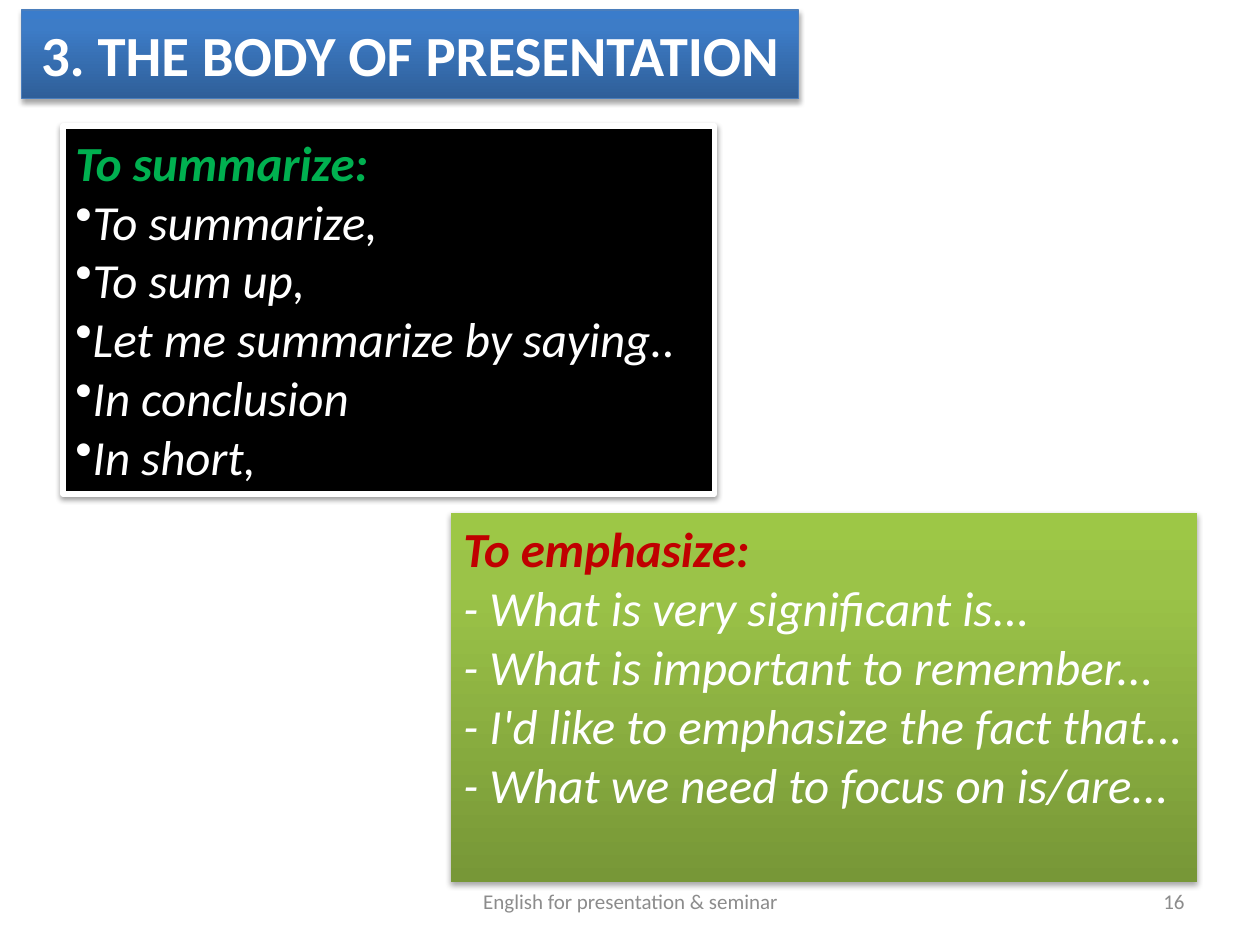
from copy import deepcopy

from lxml import etree
from pptx import Presentation
from pptx.dml.color import RGBColor
from pptx.enum.shapes import MSO_SHAPE
from pptx.enum.text import MSO_ANCHOR, PP_ALIGN
from pptx.oxml.ns import qn
from pptx.util import Inches, Pt

RECT = MSO_SHAPE.RECTANGLE
TOP, MIDDLE = MSO_ANCHOR.TOP, MSO_ANCHOR.MIDDLE
LEFT, CENTER, RIGHT = PP_ALIGN.LEFT, PP_ALIGN.CENTER, PP_ALIGN.RIGHT

WHITE = RGBColor(0xFF, 0xFF, 0xFF)
BLACK = RGBColor(0x00, 0x00, 0x00)
GREEN = RGBColor(0x00, 0xB0, 0x50)
RED = RGBColor(0xC0, 0x00, 0x00)
GRAY = RGBColor(0x8C, 0x8C, 0x8C)
BLUE_EDGE = RGBColor(0x4B, 0x7E, 0xBC)
BLUES = (RGBColor(0x2F, 0x5F, 0x99), RGBColor(0x3D, 0x7C, 0xC7), RGBColor(0x3A, 0x7C, 0xCB))
LIMES = (RGBColor(0x77, 0x97, 0x37), RGBColor(0x9B, 0xC3, 0x48), RGBColor(0x9D, 0xC7, 0x46))


class Deck:
    font = "Calibri"

    def __init__(self, prs):
        self.s = prs.slides.add_slide(prs.slide_layouts[5])

    def place(self, shape, box):
        shape.left, shape.top, shape.width, shape.height = map(Inches, box)

    def paint(self, shape, fill, line=None, width=0):
        """Fill with one colour, or with three from bottom to top."""
        if isinstance(fill, RGBColor):
            shape.fill.solid()
            shape.fill.fore_color.rgb = fill
        else:
            shape.fill.gradient()
            shape.fill.gradient_angle = 90
            first = shape._element.spPr.find(".//" + qn("a:gs"))
            first.addnext(deepcopy(first))
            for stop, color, position in zip(shape.fill.gradient_stops, fill, (0, 0.8, 1)):
                stop.color.rgb = color
                stop.position = position
        if line is None:
            shape.line.fill.background()
        else:
            shape.line.color.rgb = line
            shape.line.width = Pt(width)

    def shadow(self, shape, distance, alpha):
        shape.shadow.inherit = False
        effects = shape._element.spPr.find(qn("a:effectLst"))
        outer = etree.SubElement(effects, qn("a:outerShdw"), blurRad=str(Pt(3.1)),
                                 dist=str(Pt(distance)), dir="5400000", rotWithShape="0")
        color = etree.SubElement(outer, qn("a:srgbClr"), val="000000")
        etree.SubElement(color, qn("a:alpha"), val=str(alpha * 1000))

    def style(self, p, size, color, align=LEFT, bold=False, italic=False):
        p.alignment = align
        p.font.name, p.font.size = self.font, Pt(size)
        p.font.bold, p.font.italic = bold, italic
        p.font.color.rgb = color

    def bullet(self, p):
        pPr = p._p.get_or_add_pPr()
        pPr.set("marL", "0")
        pPr.set("indent", "0")
        # The bullet goes before the default run properties
        mark = etree.Element(qn("a:buChar"), char="•")
        pPr.find(qn("a:defRPr")).addprevious(mark)

    def title(self, text, box):
        sp = self.s.shapes.title
        self.place(sp, box)
        self.paint(sp, BLUES, BLUE_EDGE, 0.75)
        self.shadow(sp, 1.8, 35)
        tf = sp.text_frame
        tf.text = text
        tf.vertical_anchor = MIDDLE
        self.style(tf.paragraphs[0], 32.4, WHITE, CENTER, bold=True)

    def panel(self, box, heading, heading_color, phrases, fill,
              line=None, width=0, bulleted=False, distance=1.8, alpha=35):
        sp = self.s.shapes.add_shape(RECT, *map(Inches, box))
        self.paint(sp, fill, line, width)
        self.shadow(sp, distance, alpha)
        tf = sp.text_frame
        tf.word_wrap = True
        tf.vertical_anchor = TOP
        tf.margin_right = Inches(0.05)
        p = tf.paragraphs[0]
        p.text = heading
        self.style(p, 28, heading_color, bold=True, italic=True)
        for phrase in phrases:
            p = tf.add_paragraph()
            p.text = phrase
            self.style(p, 28, WHITE, italic=True)
            if bulleted:
                self.bullet(p)

    def footer(self, text, box, align):
        tf = self.s.shapes.add_textbox(*map(Inches, box)).text_frame
        tf.word_wrap = True
        tf.vertical_anchor = MIDDLE
        tf.text = text
        self.style(tf.paragraphs[0], 12, GRAY, align)


def main():
    prs = Presentation()
    prs.slide_width, prs.slide_height = Inches(10), Inches(7.5)
    deck = Deck(prs)
    deck.title("3. THE BODY OF PRESENTATION", (0.17, 0.08, 6.17, 0.7))
    deck.panel((0.5, 1, 5.17, 2.92), "To summarize:", GREEN,
               ["To summarize,", "To sum up,", "Let me summarize by saying..",
                "In conclusion", "In short,"],
               BLACK, WHITE, 3, bulleted=True, distance=1.6, alpha=38)
    deck.panel((3.58, 4.07, 5.92, 2.93), "To emphasize:", RED,
               ["- What is very significant is...",
                "- What is important to remember...",
                "- I'd like to emphasize the fact that...",
                "- What we need to focus on is/are..."], LIMES)
    deck.footer("16", (7.17, 6.95, 2.33, 0.4), RIGHT)
    deck.footer("English for presentation & seminar", (3.42, 6.95, 3.17, 0.4), CENTER)
    prs.save("out.pptx")


if __name__ == "__main__":
    main()
